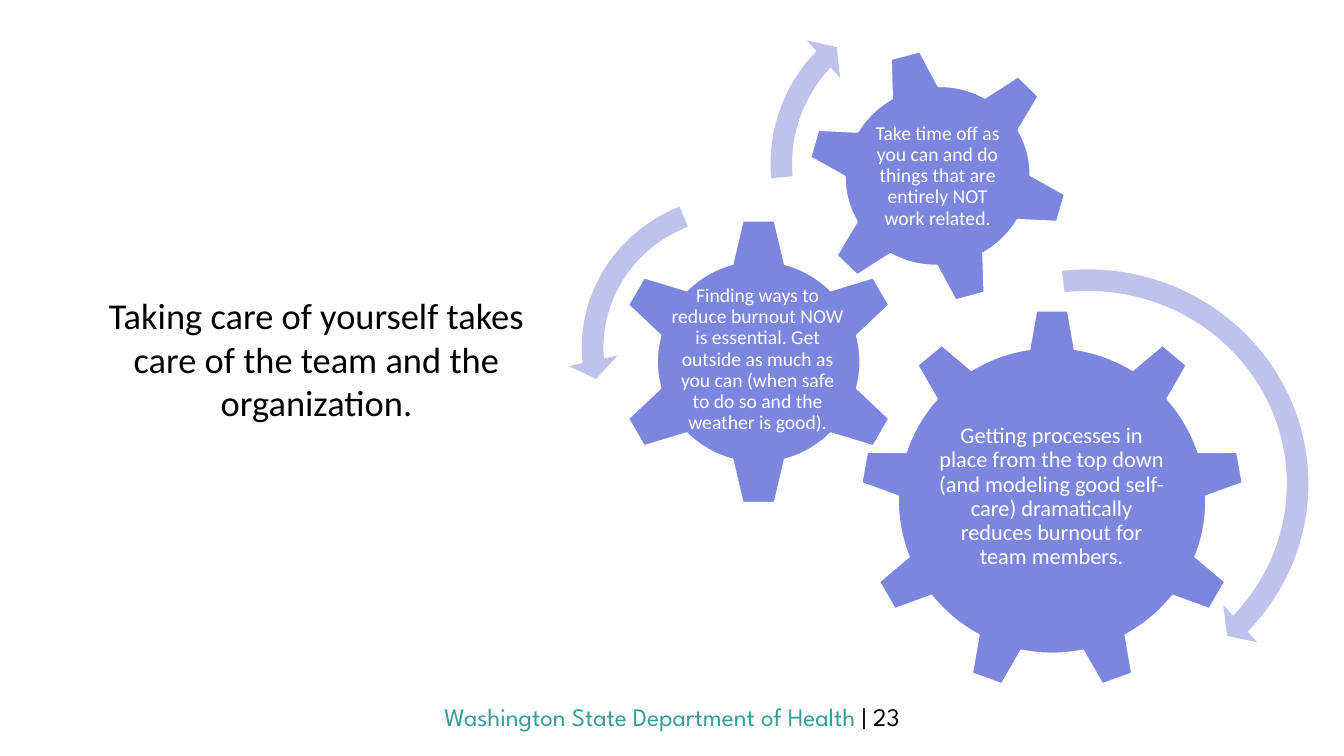
from dataclasses import dataclass

from pptx import Presentation
from pptx.dml.color import RGBColor
from pptx.enum.shapes import MSO_SHAPE
from pptx.enum.text import MSO_ANCHOR, MSO_AUTO_SIZE, PP_ALIGN
from pptx.shapes.autoshape import Shape
from pptx.util import Inches, Pt

CELL = 0.25  # side of a square grid cell, in inches
COLUMNS, ROWS = 53.32, 30


@dataclass(frozen=True)
class Theme:
    body_font: str = "Calibri"
    footer_font: str = "League Spartan"
    gear: str = "7D86DF"
    arrow: str = "BFC3EC"
    teal: str = "349D96"
    black: str = "000000"
    white: str = "FFFFFF"
    statement_size: int = 26
    footer_size: int = 18
    large_size: int = 16
    small_size: int = 14


@dataclass(frozen=True)
class Area:
    """A rectangle in grid columns and rows."""
    column: float
    row: float
    width: float
    height: float

    def lengths(self) -> list[int]:
        return [Inches(cells * CELL) for cells in (self.column, self.row, self.width, self.height)]


@dataclass(frozen=True)
class Gear:
    kind: MSO_SHAPE
    area: Area
    label_area: Area
    label: str
    size: int
    rotation: float = 0


@dataclass(frozen=True)
class Arrow:
    kind: MSO_SHAPE
    area: Area
    percentages: tuple[float, ...]


THEME = Theme()

GEARS = [
    Gear(MSO_SHAPE.GEAR_9, Area(34.12, 12.28, 15.24, 15.16), Area(37.16, 15.8, 9.12, 7.84),
         "Getting processes in place from the top down (and modeling good self-care) "
         "dramatically reduces burnout for team members.", THEME.large_size),
    Gear(MSO_SHAPE.GEAR_6, Area(24.36, 8.64, 11.48, 11.44), Area(26.52, 11.76, 7.08, 5.04),
         "Finding ways to reduce burnout NOW is essential. Get outside as much as you can "
         "(when safe to do so and the weather is good).", THEME.small_size),
    Gear(MSO_SHAPE.GEAR_6, Area(32, 1.92, 10.4, 10.12), Area(34.28, 4.16, 5.84, 5.68),
         "Take time off as you can and do things that are entirely NOT work related.",
         THEME.small_size, rotation=345),
]

ARROWS = [
    Arrow(MSO_SHAPE.CIRCULAR_ARROW, Area(33.84, 10.12, 18.64, 18.16),
          (4.7, 299, 2552.5, 15785, 5.5)),
    Arrow(MSO_SHAPE.LEFT_CIRCULAR_ARROW, Area(22.52, 7.2, 13.56, 13.2),
          (6.5, 430, 10489.1, 14837.8, 7.5)),
    Arrow(MSO_SHAPE.CIRCULAR_ARROW, Area(30, -0.6, 14.6, 14.2),
          (6, 394.1, 13313.8, 10508.2, 7)),
]


def add_text(shapes, area: Area, runs: list[tuple[str, str]], *, size: int,
             font: str = THEME.body_font, anchor: MSO_ANCHOR = MSO_ANCHOR.TOP,
             margin: float | None = None, line_spacing: float = 1.0,
             grow: bool = False) -> Shape:
    """Add one centred paragraph made of (text, colour) runs."""
    box = shapes.add_textbox(*area.lengths())
    frame = box.text_frame
    frame.word_wrap = True
    frame.auto_size = MSO_AUTO_SIZE.SHAPE_TO_FIT_TEXT if grow else MSO_AUTO_SIZE.NONE
    frame.vertical_anchor = anchor
    if margin is not None:
        frame.margin_left = frame.margin_right = Inches(margin)
        frame.margin_top = frame.margin_bottom = Inches(margin)
    paragraph = frame.paragraphs[0]
    paragraph.alignment = PP_ALIGN.CENTER
    paragraph.line_spacing = line_spacing
    for text, color in runs:
        run = paragraph.add_run()
        run.text = text
        run.font.name = font
        run.font.size = Pt(size)
        run.font.color.rgb = RGBColor.from_string(color)
    return box


def add_filled_shape(shapes, kind: MSO_SHAPE, area: Area, color: str) -> Shape:
    shape = shapes.add_shape(kind, *area.lengths())
    shape.shadow.inherit = False
    shape.fill.solid()
    shape.fill.fore_color.rgb = RGBColor.from_string(color)
    shape.line.fill.background()
    return shape


def add_gear(slide, gear: Gear) -> None:
    shapes = slide.shapes.add_group_shape().shapes
    shape = add_filled_shape(shapes, gear.kind, gear.area, THEME.gear)
    shape.rotation = gear.rotation
    shape.line.color.rgb = RGBColor.from_string(THEME.white)
    shape.line.width = Pt(1)
    add_text(shapes, gear.label_area, [(gear.label, THEME.white)], size=gear.size,
             anchor=MSO_ANCHOR.MIDDLE, margin=0.02, line_spacing=0.9)


def add_arrow(slide, arrow: Arrow) -> None:
    shape = add_filled_shape(slide.shapes, arrow.kind, arrow.area, THEME.arrow)
    for index, percentage in enumerate(arrow.percentages):
        shape.adjustments[index] = percentage / 100


def main() -> None:
    presentation = Presentation()
    presentation.slide_width = Inches(13.33)
    presentation.slide_height = Inches(ROWS * CELL)
    slide = presentation.slides.add_slide(presentation.slide_layouts[6])

    # Footer
    add_text(slide.shapes, Area(0, 27.64, COLUMNS, 1.6),
             [("Washington State Department of Health ", THEME.teal), ("| 23", THEME.black)],
             size=THEME.footer_size, font=THEME.footer_font, grow=True)

    # Gears and the arrows that turn around them
    for gear in GEARS:
        add_gear(slide, gear)
    for arrow in ARROWS:
        add_arrow(slide, arrow)

    # Statement
    add_text(slide.shapes, Area(3.08, 11.44, 18.96, 5.64),
             [("Taking care of yourself takes care of the team and the organization.",
               THEME.black)],
             size=THEME.statement_size, grow=True)

    presentation.save("out.pptx")


if __name__ == "__main__":
    main()
